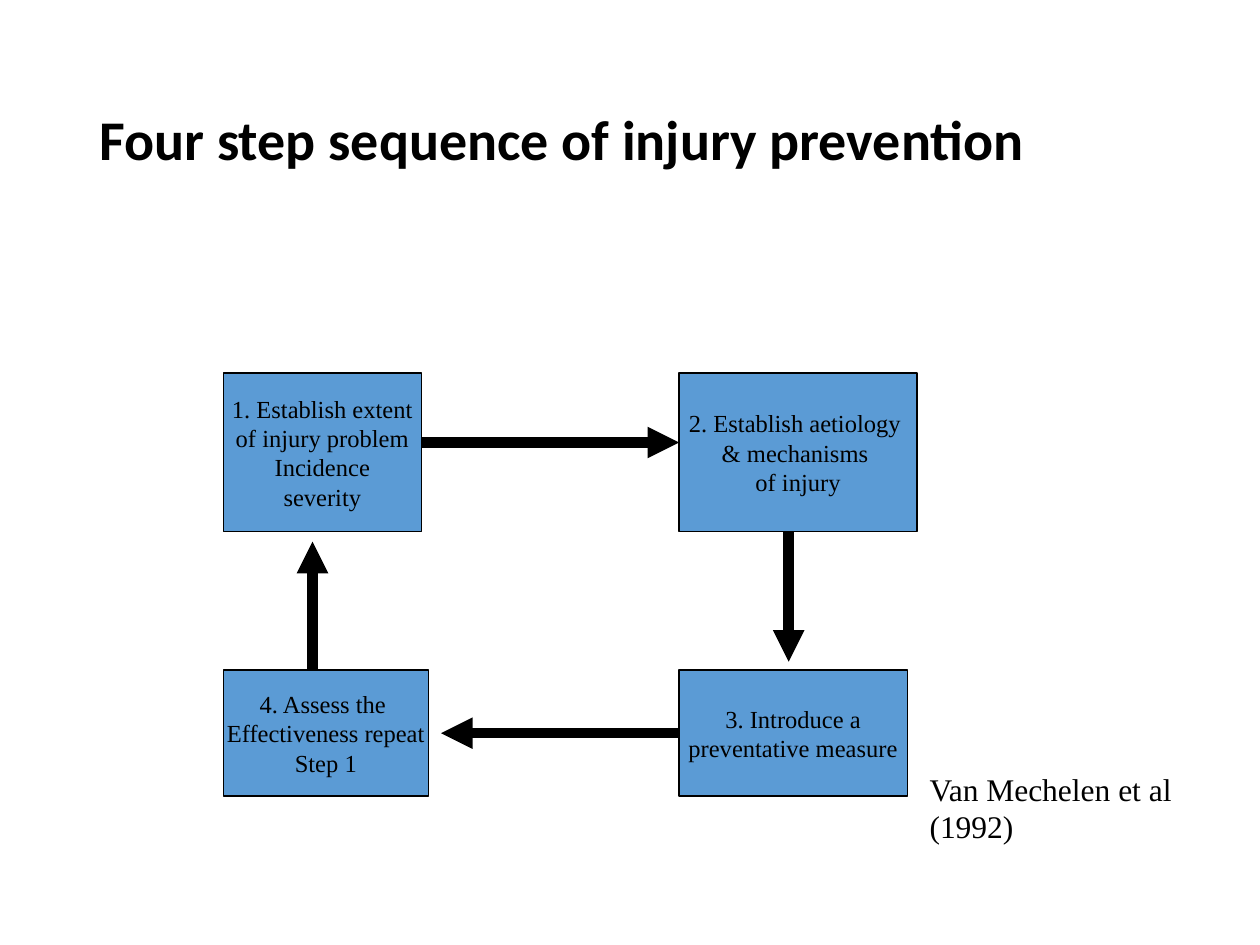
from lxml.etree import SubElement
from pptx import Presentation
from pptx.dml.color import RGBColor
from pptx.enum.shapes import MSO_CONNECTOR as Connector, MSO_SHAPE as Shape
from pptx.enum.text import MSO_ANCHOR as Anchor, MSO_AUTO_SIZE as AutoSize, PP_ALIGN as Align
from pptx.oxml.ns import qn
from pptx.util import Cm, Pt

COLOURS = {"ink": "000000", "box": "5B9BD5"}
LEFT, RIGHT = 4.5, 13.69
TOP, BOTTOM = 7.52, 13.51
UPPER_HEIGHT, LOWER_HEIGHT = 3.2, 2.54
STEPS = [
    (LEFT, TOP, 4, UPPER_HEIGHT,
     ["1. Establish extent", "of injury problem", "Incidence", "severity"]),
    (RIGHT, TOP, 4.8, UPPER_HEIGHT,
     ["2. Establish aetiology ", "& mechanisms ", "of injury"]),
    (RIGHT, BOTTOM, 4.6, LOWER_HEIGHT,
     ["3. Introduce a", "preventative measure"]),
    (LEFT, BOTTOM, 4.14, LOWER_HEIGHT,
     ["4. Assess the ", "Effectiveness repeat", "Step 1"]),
]


def colour(name):
    """Return the named colour."""
    return RGBColor.from_string(COLOURS[name])


def write(frame, lines, size, font="Times New Roman", bold=False,
          align=Align.LEFT, anchor=Anchor.TOP, wrap=True, spacing=None):
    """Fill a text frame with one formatted paragraph for each line."""
    frame.word_wrap = wrap
    frame.vertical_anchor = anchor
    for index, line in enumerate(lines):
        para = frame.add_paragraph() if index else frame.paragraphs[0]
        para.alignment = align
        para.line_spacing = spacing
        span = para.add_run()
        span.text = line
        span.font.name = font
        span.font.size = Pt(size)
        span.font.bold = bold
        span.font.color.rgb = colour("ink")


def add_title(page, text):
    """Place and format the title placeholder."""
    title = page.shapes.title
    title.left, title.top, title.width, title.height = Cm(1.75), Cm(1.02), Cm(21.9), Cm(3.68)
    write(title.text_frame, [text], 32, font="Calibri", bold=True,
          anchor=Anchor.MIDDLE, spacing=0.9)


def add_step(page, left, top, width, height, lines):
    """Add one step of the sequence as a filled rectangle."""
    box = page.shapes.add_shape(Shape.RECTANGLE, Cm(left), Cm(top), Cm(width), Cm(height))
    box.shadow.inherit = False
    box.fill.solid()
    box.fill.fore_color.rgb = colour("box")
    box.line.color.rgb = colour("ink")
    box.line.width = Pt(0.75)
    write(box.text_frame, lines, 14, align=Align.CENTER, anchor=Anchor.MIDDLE, wrap=False)
    return box


def add_arrow(page, start_x, start_y, end_x, end_y):
    """Add a thick straight arrow that points at its end."""
    arrow = page.shapes.add_connector(
        Connector.STRAIGHT, Cm(start_x), Cm(start_y), Cm(end_x), Cm(end_y))
    arrow.line.color.rgb = colour("ink")
    arrow.line.width = Pt(6)
    SubElement(arrow.line._get_or_add_ln(), qn("a:tailEnd"), type="triangle")
    SubElement(arrow._element.spPr, qn("a:effectLst"))
    return arrow


def add_citation(page, text):
    """Add the citation beside the last row of steps."""
    box = page.shapes.add_textbox(Cm(18.49), Cm(15.39), Cm(5.99), Cm(1.78))
    write(box.text_frame, [text], 18)
    box.text_frame.auto_size = AutoSize.SHAPE_TO_FIT_TEXT


def main():
    """Build the slide and save it."""
    deck = Presentation()
    deck.slide_width, deck.slide_height = Cm(25.4), Cm(19.05)
    page = deck.slides.add_slide(deck.slide_layouts[5])
    add_title(page, "Four step sequence of injury prevention")
    boxes = [add_step(page, *step) for step in STEPS]
    lower_middle = BOTTOM + LOWER_HEIGHT / 2
    add_arrow(page, 8.5, 8.92, RIGHT, 8.92)
    add_arrow(page, 15.9, TOP + UPPER_HEIGHT, 15.9, 13.34)
    add_arrow(page, RIGHT, lower_middle, 8.89, lower_middle).begin_connect(boxes[2], 1)
    add_arrow(page, 6.3, BOTTOM, 6.3, 10.92)
    add_citation(page, "Van Mechelen et al (1992)")
    deck.save("out.pptx")


if __name__ == "__main__":
    main()
